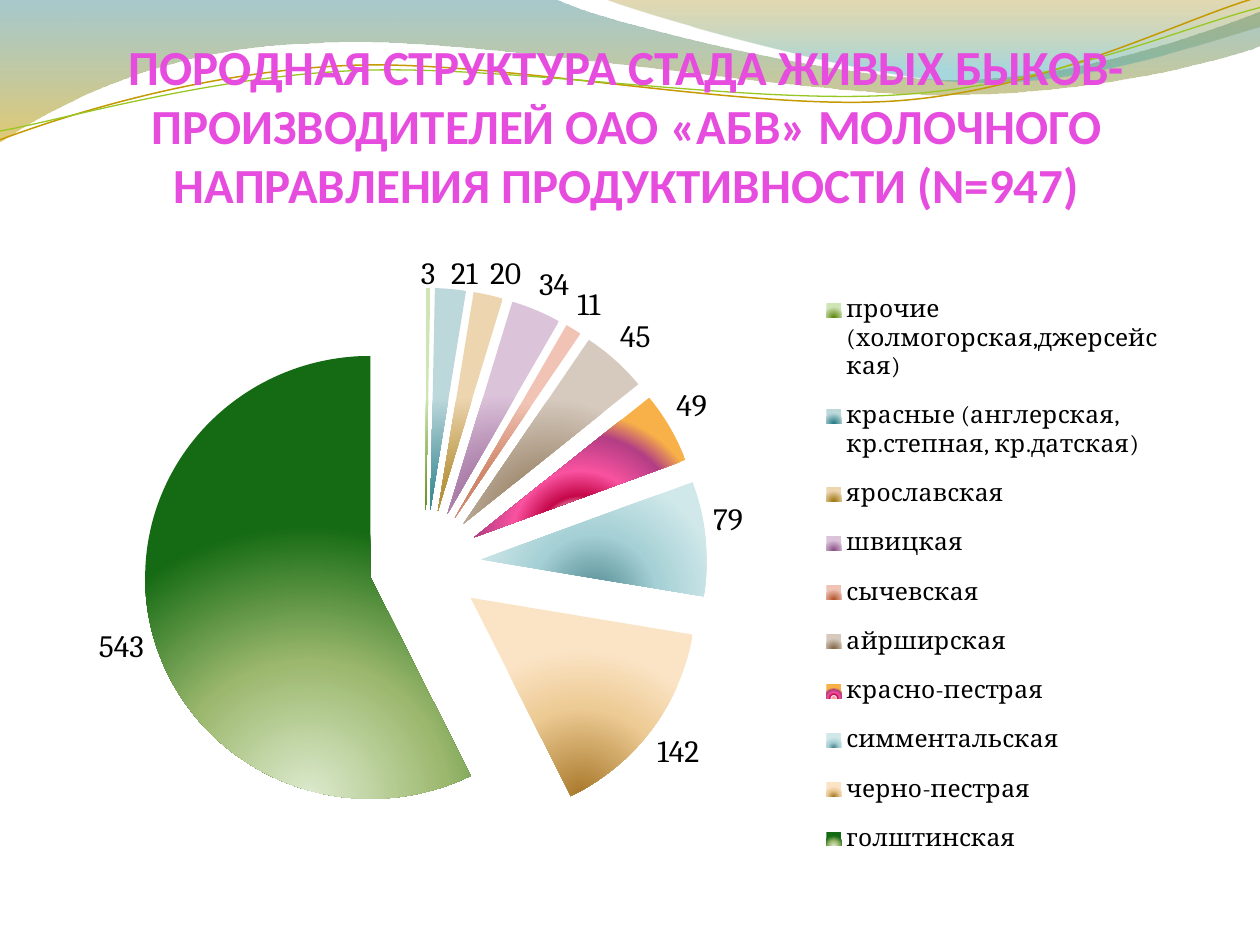
from dataclasses import dataclass
from itertools import chain
from typing import Optional

from lxml import etree
from pptx import Presentation
from pptx.chart.data import CategoryChartData
from pptx.dml.color import RGBColor
from pptx.enum import chart as ch, text as tx
from pptx.oxml import parse_xml
from pptx.oxml.ns import nsdecls, qn
from pptx.util import Inches, Pt

Point = tuple[float, float]
DOWNWARD = '<a:lin ang="5400000" scaled="0"/>'
FROM_BOTTOM = ('<a:path path="circle">'
               '<a:fillToRect l="50000" t="100000" r="50000"/></a:path>')
UNITS_PER_INCH = 1000


@dataclass
class Stop:
    position: int
    color: str
    alpha: int = 100


@dataclass
class Wave:
    runs: list[list[Point]]
    stops: Optional[list[Stop]] = None
    line: str = ""
    weight: float = 0


@dataclass
class Breed:
    name: str
    bulls: int
    stops: list[Stop]


def shade(inner: str, outer: str) -> list[Stop]:
    return [Stop(0, inner), Stop(100, outer)]


WAVES = [
    Wave([[(0, 0)], [(4.4, -0.01)],
          [(4.76, 0.17), (6.64, 0.63), (7.58, 0.63)],
          [(8.53, 0.63), (9.58, 0.26), (10, 0.09)], [(10.01, 0.36)],
          [(9.83, 0.44), (8.7, 0.76), (7.46, 0.75)],
          [(6.22, 0.75), (3.82, 0.28), (2.57, 0.34)],
          [(1.29, 0.36), (0.46, 0.83), (-0.01, 1.13)]],
         [Stop(0, "3B8890", 45), Stop(100, "C99E00", 55)]),
    Wave([[(4.79, -0.01)],
          [(5.09, 0.11), (6.82, 0.62), (7.69, 0.65)],
          [(8.56, 0.69), (9.61, 0.32), (10, 0.21)], [(10, 0)]],
         [Stop(0, "A48100", 30), Stop(80, "3EA9B4", 45)]),
    Wave([[(0, 1.11)],
          [(0.48, 0.93), (1.58, 0.57), (2.77, 0.52)],
          [(3.95, 0.47), (5.93, 0.89), (7.13, 0.8)],
          [(8.33, 0.71), (9.38, 0.15), (9.98, -0.02)]],
         line="C49A00", weight=0.85),
    Wave([[(0, 1.04)],
          [(0.47, 0.96), (1.64, 0.61), (2.83, 0.56)],
          [(4.03, 0.51), (5.97, 0.84), (7.17, 0.75)],
          [(8.36, 0.67), (9.41, 0.21), (10, 0.06)]],
         line="98C723", weight=0.75),
]

BREEDS = [
    Breed("прочие (холмогорская,джерсейская)", 3, shade("5E8A10", "CFE5B5")),
    Breed("красные (англерская, кр.степная, кр.датская)", 21,
          shade("257D88", "BDD8DB")),
    Breed("ярославская", 20, shade("A17A10", "EDD5B0")),
    Breed("швицкая", 34, shade("8A4F87", "DBC3DA")),
    Breed("сычевская", 11, shade("B5522A", "F0C3B4")),
    Breed("айрширская", 45, shade("7F6440", "D6CABF")),
    Breed("красно-пестрая", 49,
          [Stop(0, "F8B049"), Stop(11, "FC9FCB"), Stop(22, "FEE7F2"),
           Stop(33, "C50849"), Stop(53, "F952A0"), Stop(82, "B43E85"),
           Stop(100, "F8B049")]),
    Breed("симментальская", 79,
          [Stop(0, "4F8890"), Stop(50, "A5D0D5"), Stop(100, "D0E8EA")]),
    Breed("черно-пестрая", 142,
          [Stop(0, "A8782A"), Stop(60, "EDCB94"), Stop(100, "FBE4C6")]),
    Breed("голштинская", 543,
          [Stop(0, "DDEBCF"), Stop(50, "9CB86E"), Stop(100, "156B13")]),
]


def rgb(color: str) -> RGBColor:
    return RGBColor.from_string(color)


def replace_fill(properties, stops: list[Stop], direction: str) -> None:
    marks = "".join(
        f'<a:gs pos="{s.position * 1000}"><a:srgbClr val="{s.color}">'
        f'<a:alpha val="{s.alpha * 1000}"/></a:srgbClr></a:gs>' for s in stops)
    gradient = parse_xml(f'<a:gradFill {nsdecls("a")} rotWithShape="1">'
                         f'<a:gsLst>{marks}</a:gsLst>{direction}</a:gradFill>')
    properties.replace(properties.find(qn("a:solidFill")), gradient)


def bend_segments(properties, runs: list[list[Point]]) -> None:
    segments = iter(list(properties.iter(qn("a:lnTo"))))
    for run in runs:
        steps = [next(segments) for _ in run]
        if len(run) == 3:
            curve = etree.Element(qn("a:cubicBezTo"))
            steps[0].addprevious(curve)
            for step in steps:
                curve.append(step[0])
                step.getparent().remove(step)


def draw_wave(slide, wave: Wave) -> None:
    outline = [(round(x * UNITS_PER_INCH), round(y * UNITS_PER_INCH))
               for x, y in chain.from_iterable(wave.runs)]
    builder = slide.shapes.build_freeform(
        *outline[0], scale=Inches(1) / UNITS_PER_INCH)
    builder.add_line_segments(outline[1:], close=False)
    band = builder.convert_to_shape()
    band.shadow.inherit = False
    properties = band._element.spPr
    bend_segments(properties, wave.runs[1:])
    if wave.stops:
        contour = next(properties.iter(qn("a:path")))
        contour.append(etree.Element(qn("a:close")))
        band.fill.solid()
        replace_fill(properties, wave.stops, DOWNWARD)
        band.line.fill.background()
    else:
        band.fill.background()
        band.line.color.rgb = rgb(wave.line)
        band.line.width = Pt(wave.weight)


def place(parent, index: int, x: float, y: float, w: float, h: float,
          inner: bool = False) -> None:
    for old in parent.findall(qn("c:layout")):
        parent.remove(old)
    target = '<c:layoutTarget val="inner"/>' if inner else ""
    parent.insert(index, parse_xml(
        f'<c:layout {nsdecls("c")}><c:manualLayout>{target}'
        '<c:xMode val="edge"/><c:yMode val="edge"/>'
        f'<c:x val="{x}"/><c:y val="{y}"/><c:w val="{w}"/><c:h val="{h}"/>'
        '</c:manualLayout></c:layout>'))


def explosion():
    element = etree.Element(qn("c:explosion"))
    element.set("val", "25")
    return element


def draw_breed_pie(slide, breeds: list[Breed]) -> None:
    herd = CategoryChartData()
    herd.categories = [breed.name for breed in breeds]
    herd.add_series("Series 1", [breed.bulls for breed in breeds])
    pie = slide.shapes.add_chart(ch.XL_CHART_TYPE.PIE, Inches(0.51), Inches(1.94),
                                 Inches(8.82), Inches(5.2), herd).chart
    pie.has_title = False
    pie.font.name = "Cambria"
    pie.font.size = Pt(18)
    pie.font.color.rgb = rgb("000000")
    pie.has_legend = True
    pie.legend.position = ch.XL_LEGEND_POSITION.RIGHT
    pie.legend.include_in_layout = False
    pie.legend.font.size = Pt(14)
    place(pie.legend._element, 1, 0.68, 0.03, 0.31, 0.93)
    place(pie._chartSpace.chart.plotArea, 0, 0.07, 0.05, 0.51, 0.86, inner=True)

    plot = pie.plots[0]
    plot.vary_by_categories = True
    series = plot.series[0]
    for index, breed in enumerate(breeds):
        series.points[index].format.fill.solid()
        slice_node = series._element.findall(qn("c:dPt"))[index]
        properties = slice_node.find(qn("c:spPr"))
        replace_fill(properties, breed.stops, FROM_BOTTOM)
        properties.addprevious(explosion())
    series._element.find(qn("c:dPt")).addprevious(explosion())
    labels = series.data_labels
    labels.show_value = True
    labels.position = ch.XL_LABEL_POSITION.OUTSIDE_END


def write_title(slide, wording: str) -> None:
    title = slide.shapes.title
    slide.shapes._spTree.append(title._element)
    title.left, title.top = Inches(0.43), Inches(0.44)
    title.width, title.height = Inches(9.08), Inches(1.25)
    frame = title.text_frame
    frame.text = wording
    frame.word_wrap = True
    frame.auto_size = tx.MSO_AUTO_SIZE.NONE
    frame.vertical_anchor = tx.MSO_ANCHOR.BOTTOM
    frame.margin_left = frame.margin_right = frame.margin_bottom = 0
    frame.margin_top = Inches(0.05)
    frame.paragraphs[0].alignment = tx.PP_ALIGN.CENTER
    font = frame.paragraphs[0].runs[0].font
    font.name, font.size, font.bold = "Calibri", Pt(28), True
    font.color.rgb = rgb("E64CDE")


def main() -> None:
    deck = Presentation()
    deck.slide_width, deck.slide_height = Inches(10), Inches(7.5)
    slide = deck.slides.add_slide(deck.slide_layouts[5])
    for wave in WAVES:
        draw_wave(slide, wave)
    draw_breed_pie(slide, BREEDS)
    write_title(slide, "ПОРОДНАЯ СТРУКТУРА СТАДА ЖИВЫХ БЫКОВ-ПРОИЗВОДИТЕЛЕЙ "
                       "ОАО «АБВ» МОЛОЧНОГО НАПРАВЛЕНИЯ ПРОДУКТИВНОСТИ (N=947)")
    deck.save("out.pptx")


if __name__ == "__main__":
    main()
